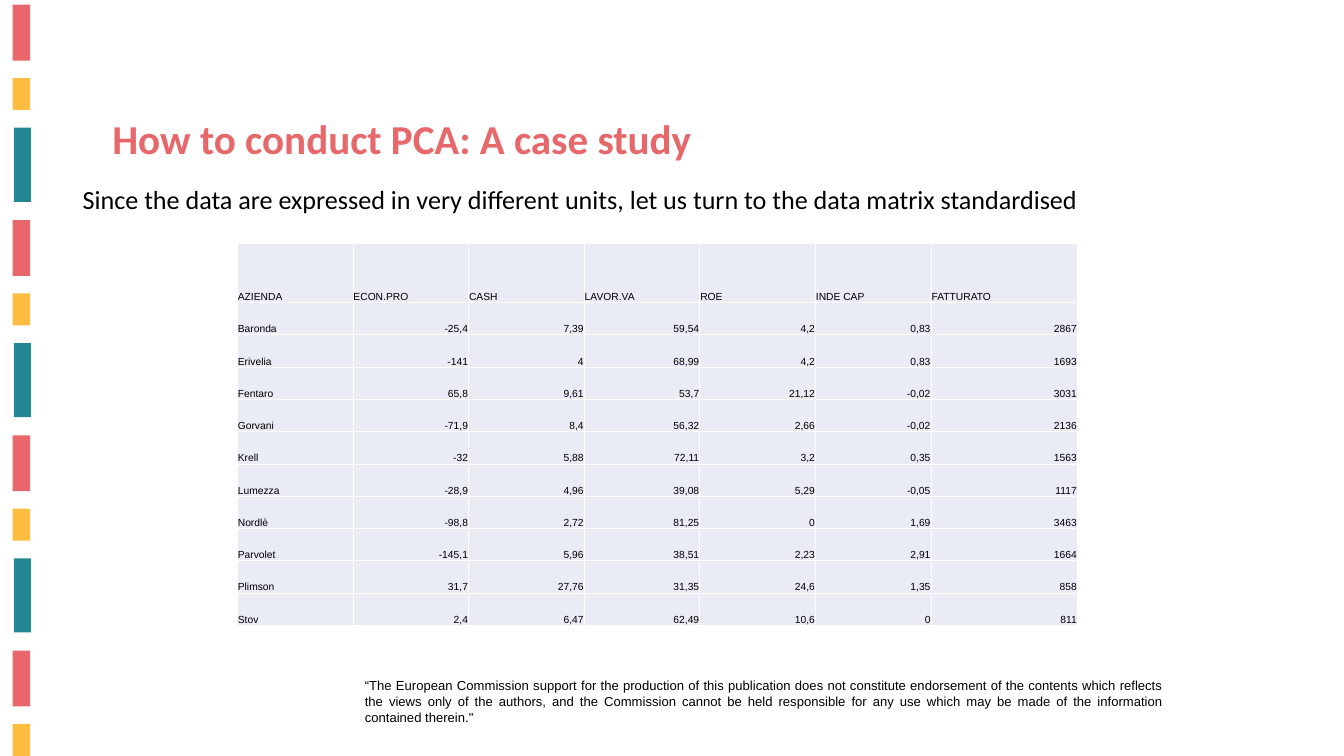
import lxml.etree
import pptx
import pptx.dml.color
import pptx.enum.shapes
import pptx.enum.text
import pptx.oxml.ns
import pptx.util

Cm = pptx.util.Cm
Pt = pptx.util.Pt
ALIGN = pptx.enum.text.PP_ALIGN
ANCHOR = pptx.enum.text.MSO_ANCHOR

SLIDE_WIDTH, SLIDE_HEIGHT = 50.8, 28.58
COLOURS = {
    "coral": "E8676A",
    "yellow": "FDBD40",
    "teal": "238791",
    "title": "E7686A",
    "text": "000000",
    "cell": "E9EBF5",
    "border": "FFFFFF",
}
# Colour, offset from the left, offset from the top, width, height
STRIPE_GROUP = [
    ("coral", 0, 0, 0.66, 2.11),
    ("yellow", 0, 2.77, 0.66, 1.21),
    ("teal", 0.05, 4.65, 0.64, 2.8),
]
STRIPE_PITCH = 8.14

HEADINGS = ["AZIENDA", "ECON.PRO", "CASH", "LAVOR.VA", "ROE", "INDE CAP", "FATTURATO"]
COMPANIES = [
    ["Baronda", "-25,4", "7,39", "59,54", "4,2", "0,83", "2867"],
    ["Erivelia", "-141", "4", "68,99", "4,2", "0,83", "1693"],
    ["Fentaro", "65,8", "9,61", "53,7", "21,12", "-0,02", "3031"],
    ["Gorvani", "-71,9", "8,4", "56,32", "2,66", "-0,02", "2136"],
    ["Krell", "-32", "5,88", "72,11", "3,2", "0,35", "1563"],
    ["Lumezza", "-28,9", "4,96", "39,08", "5,29", "-0,05", "1117"],
    ["Nordlè", "-98,8", "2,72", "81,25", "0", "1,69", "3463"],
    ["Parvolet", "-145,1", "5,96", "38,51", "2,23", "2,91", "1664"],
    ["Plimson", "31,7", "27,76", "31,35", "24,6", "1,35", "858"],
    ["Stov", "2,4", "6,47", "62,49", "10,6", "0", "811"],
]
DISCLAIMER = (
    "“The European Commission support for the production of this publication does not "
    "constitute endorsement of the contents which reflects the views only of the authors, "
    "and the Commission cannot be held responsible for any use which may be made of the "
    'information contained therein."'
)


def rgb(name):
    return pptx.dml.color.RGBColor.from_string(COLOURS[name])


def add_span(para, text, font, size, colour="text", bold=False):
    span = para.add_run()
    span.text = text
    span.font.name = font
    span.font.size = Pt(size)
    span.font.bold = bold
    span.font.color.rgb = rgb(colour)


def place(shape, box):
    shape.left, shape.top, shape.width, shape.height = map(Cm, box)


def write_block(shape, text, font, size, align, colour="text", bold=False):
    """Write one wrapped paragraph from the top of a text shape."""
    frame = shape.text_frame
    frame.word_wrap = True
    frame.auto_size = pptx.enum.text.MSO_AUTO_SIZE.NONE
    frame.vertical_anchor = ANCHOR.TOP
    para = frame.paragraphs[0]
    para.alignment = align
    para.space_before = Pt(0)
    add_span(para, text, font, size, colour, bold)


def add_title(page, box):
    title = page.shapes.title
    place(title, box)
    write_block(title, "How to conduct PCA: A case study", "Calibri", 44,
                ALIGN.LEFT, "title", True)


def add_statement(page, box):
    body = page.placeholders[1]
    place(body, box)
    properties = body.text_frame.paragraphs[0]._p.get_or_add_pPr()
    properties.set("marL", "0")
    properties.set("indent", "0")
    lxml.etree.SubElement(properties, pptx.oxml.ns.qn("a:buNone"))
    write_block(body, "Since the data are expressed in very different units, "
                "let us turn to the data matrix standardised", "Calibri", 28, ALIGN.JUSTIFY)


def add_disclaimer(page, box):
    note = page.shapes.add_textbox(*map(Cm, box))
    write_block(note, DISCLAIMER, "Arial", 14, ALIGN.JUSTIFY)


def add_stripes(page, box):
    """Repeat the group of three stripes down the box, until its bottom edge."""
    left, top, _, height = box
    bottom = top + height
    start = top
    while start < bottom:
        for colour, across, down, stripe_width, stripe_height in STRIPE_GROUP:
            stripe_top = start + down
            if stripe_top >= bottom:
                break
            stripe = page.shapes.add_shape(
                pptx.enum.shapes.MSO_SHAPE.RECTANGLE, Cm(left + across), Cm(stripe_top),
                Cm(stripe_width), Cm(min(stripe_height, bottom - stripe_top)))
            stripe.shadow.inherit = False
            stripe.fill.solid()
            stripe.fill.fore_color.rgb = rgb(colour)
            stripe.line.fill.background()
        start += STRIPE_PITCH


def add_borders(cell):
    properties = cell._tc.get_or_add_tcPr()
    for side in ("lnL", "lnR", "lnT", "lnB"):
        line = lxml.etree.SubElement(properties, pptx.oxml.ns.qn("a:" + side), w=str(Pt(1)))
        fill = lxml.etree.SubElement(line, pptx.oxml.ns.qn("a:solidFill"))
        lxml.etree.SubElement(fill, pptx.oxml.ns.qn("a:srgbClr"), val=COLOURS["border"])


def format_cell(cell, text, align):
    add_borders(cell)
    cell.fill.solid()
    cell.fill.fore_color.rgb = rgb("cell")
    cell.vertical_anchor = ANCHOR.BOTTOM
    cell.margin_left = cell.margin_right = cell.margin_top = Cm(0.02)
    cell.margin_bottom = 0
    para = cell.text_frame.paragraphs[0]
    para.alignment = align
    add_span(para, text, "Arial", 11)


def add_company_table(page, box):
    """Fill the box with a taller heading row and a wider last column."""
    rows = [HEADINGS] + COMPANIES
    _, _, width, height = box
    column_width, row_height = 4.37, 1.22
    table = page.shapes.add_table(len(rows), len(HEADINGS), *map(Cm, box)).table
    table.first_row = False
    table.horz_banding = False
    for column in table.columns:
        column.width = Cm(column_width)
    table.columns[len(HEADINGS) - 1].width = Cm(width - column_width * (len(HEADINGS) - 1))
    for row in table.rows:
        row.height = Cm(row_height)
    table.rows[0].height = Cm(height - row_height * len(COMPANIES))
    for row_index, values in enumerate(rows):
        for column_index, text in enumerate(values):
            is_number = row_index > 0 and column_index > 0
            format_cell(table.cell(row_index, column_index), text,
                        ALIGN.RIGHT if is_number else ALIGN.LEFT)


def main():
    deck = pptx.Presentation()
    deck.slide_width = Cm(SLIDE_WIDTH)
    deck.slide_height = Cm(SLIDE_HEIGHT)
    page = deck.slides.add_slide(deck.slide_layouts[1])
    add_stripes(page, (0.48, 0.18, 0.69, SLIDE_HEIGHT - 0.18))
    add_disclaimer(page, (13.54, 25.5, 30.68, 2.06))
    add_title(page, (3.99, 4.17, 30.94, 2.13))
    add_statement(page, (2.87, 6.81, 41.07, 2.64))
    add_company_table(page, (8.97, 9.22, 31.75, 14.42))
    deck.save("out.pptx")


if __name__ == "__main__":
    main()
